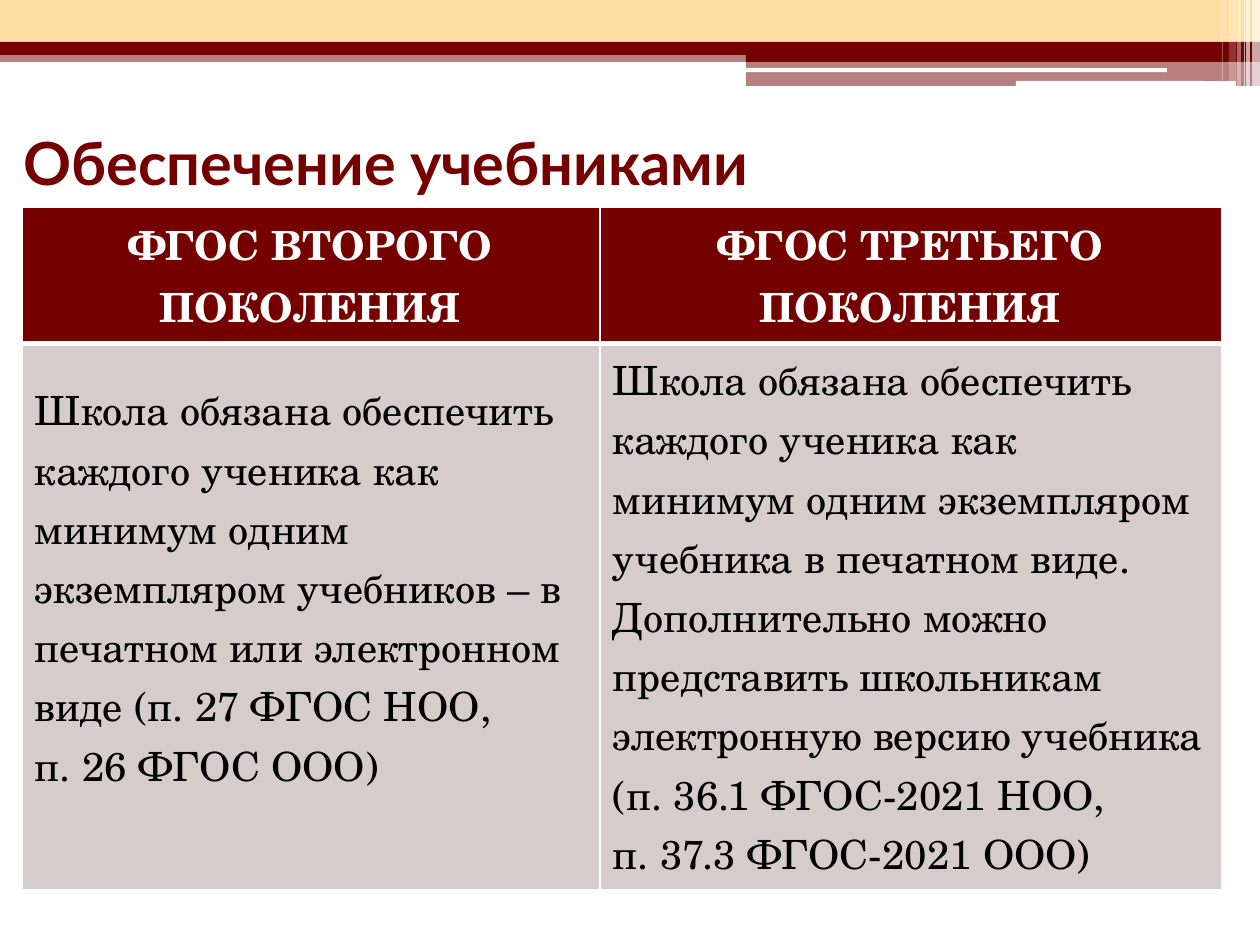
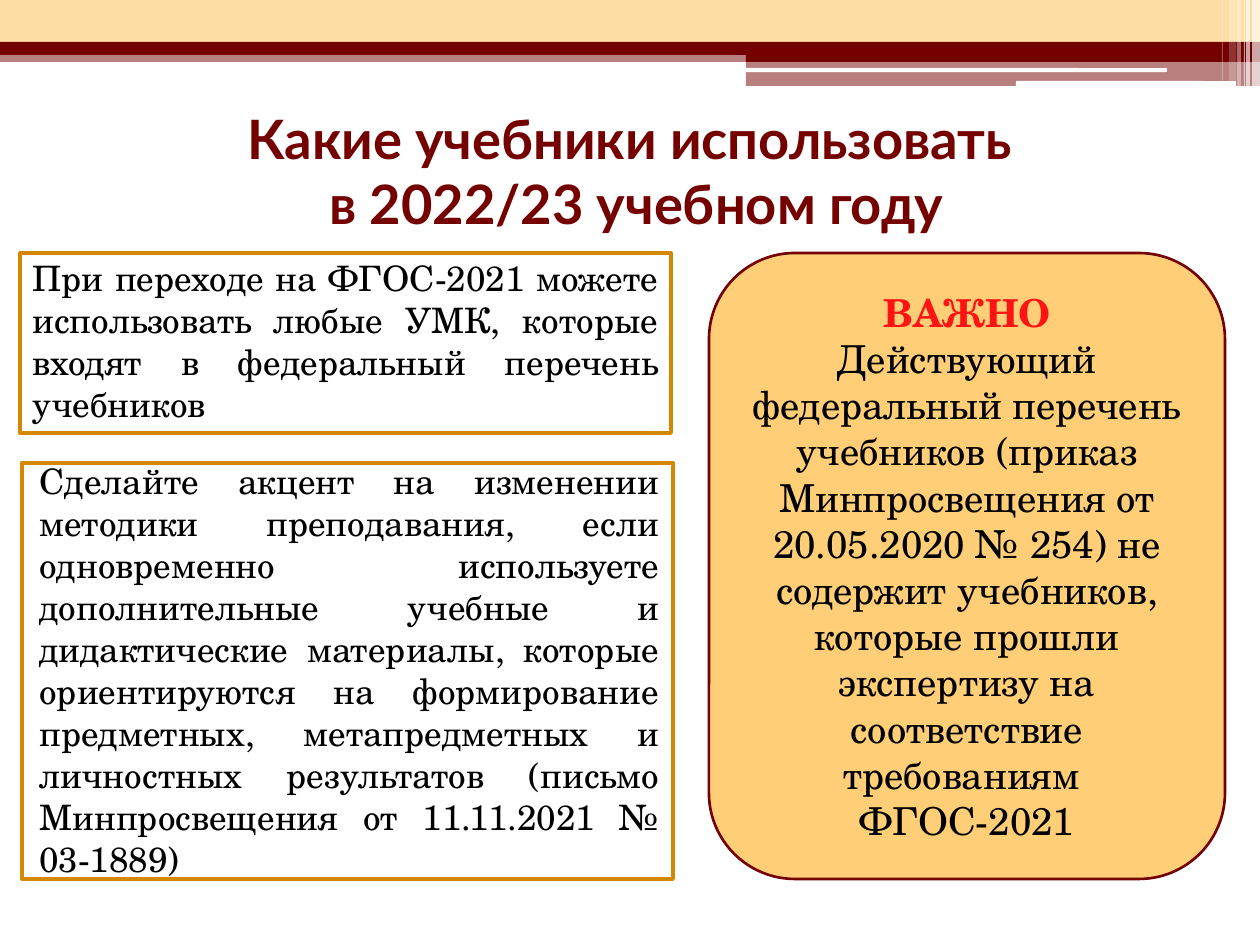
from lxml.etree import Element, SubElement
from pptx import Presentation
from pptx.dml.color import RGBColor
from pptx.enum.shapes import MSO_SHAPE
from pptx.enum.text import MSO_ANCHOR, MSO_AUTO_SIZE, PP_ALIGN
from pptx.oxml.ns import qn
from pptx.util import Emu, Pt

COLORS = {
    "maroon": "740000", "cream": "FFDEA4", "white": "FFFFFF", "black": "000000",
    "cell": "D6CCCC", "ochre": "D48800", "amber": "FFCE77", "alert": "FF1313",
}
TITLE_FONT, BODY_FONT = "Lato", "TeX Gyre Schola"
PX_PER_INCH = 126
SLIDE_SIZE = (1260, 945)

# left, top, width, height, colour, opacity in percent
BANDS = [
    (0, 50, 1260, 12, "maroon", 50),
    (0, 0, 1260, 42, "cream", 100),
    (0, 42, 1260, 13, "maroon", 100),
    (746, 49, 514, 13, "maroon", 100),
    (746, 61, 514, 25, "maroon", 50),
]
ROUNDED_BANDS = [
    (745, 68, 422, 4, "white", 100),
    (1016, 81, 220, 5, "white", 100),
]
# left, width, height, opacity in percent
EDGE_STRIPES = [
    (1252, 8, 86, 65), (1246, 4, 86, 65), (1244, 1, 86, 60),
    (1237, 4, 86, 40), (1229, 7, 81, 20), (1222, 1, 81, 30),
]

SUPPLY_TITLE = "Обеспечение учебниками"
SUPPLY_COLUMNS = [
    {"width": 578, "header": "ФГОС ВТОРОГО ПОКОЛЕНИЯ", "bottom": 64, "body": [
        "Школа обязана обеспечить каждого ученика как минимум одним экземпляром "
        "учебников – в печатном или электронном виде (п. 27 ФГОС НОО,",
        "п. 26 ФГОС ООО)"]},
    {"width": 622, "header": "ФГОС ТРЕТЬЕГО ПОКОЛЕНИЯ", "bottom": 6, "body": [
        "Школа обязана обеспечить каждого ученика как минимум одним экземпляром "
        "учебника в печатном виде. Дополнительно можно представить школьникам "
        "электронную версию учебника (п. 36.1 ФГОС-2021 НОО,",
        "п. 37.3 ФГОС-2021 ООО)"]},
]
SUPPLY_ROWS = (136, 546)

CHOICE_TITLE = "Какие учебники использовать \vв 2022/23 учебном году"
# frame, text area, text
ADVICE = [
    ((20, 253, 651, 180), (20, 249, 651, 183),
     "При переходе на ФГОС-2021 можете использовать любые УМК, которые входят "
     "в федеральный перечень учебников"),
    ((22, 463, 651, 416), (27, 451, 645, 437),
     "Сделайте акцент на изменении методики преподавания, если одновременно "
     "используете дополнительные учебные и дидактические материалы, которые "
     "ориентируются на формирование предметных, метапредметных и личностных "
     "результатов (письмо Минпросвещения от 11.11.2021 № 03-1889)"),
]
WARNING = [
    "ВАЖНО",
    "Действующий федеральный перечень учебников (приказ Минпросвещения от "
    "20.05.2020 № 254) не содержит учебников, которые прошли экспертизу на "
    "соответствие требованиям ",
    "ФГОС-2021",
]


def px(length):
    return Emu(round(length * 914400 / PX_PER_INCH))


def place(area):
    return [px(length) for length in area]


def color(name):
    return RGBColor.from_string(COLORS[name])


def write(frame, texts, size, ink="black", font=BODY_FONT, bold=False, align=PP_ALIGN.LEFT):
    """Fill a text frame with one evenly formatted paragraph per text."""
    for index, text in enumerate(texts):
        para = frame.add_paragraph() if index else frame.paragraphs[0]
        para.text = text
        para.alignment = align
        para.font.name, para.font.size, para.font.bold = font, Pt(size), bold
        para.font.color.rgb = color(ink)


def add_box(page, area, fill=None, line=None, width=0, opacity=100, kind=MSO_SHAPE.RECTANGLE):
    box = page.shapes.add_shape(kind, *place(area))
    box.shadow.inherit = False
    if fill:
        box.fill.solid()
        box.fill.fore_color.rgb = color(fill)
        if opacity < 100:
            tint = box.element.spPr.find(qn("a:solidFill"))[0]
            SubElement(tint, qn("a:alpha"), val=str(opacity * 1000))
    else:
        box.fill.background()
    if line:
        box.line.color.rgb = color(line)
        box.line.width = Pt(width)
    else:
        box.line.fill.background()
    return box


def decorate_layout(layout, page):
    """Draw the bands on a page, then move them to the layout that all pages share."""
    stripes = [(left, 0, width, height, "white", opacity)
               for left, width, height, opacity in EDGE_STRIPES]
    for kind, bands in ((MSO_SHAPE.RECTANGLE, BANDS),
                        (MSO_SHAPE.ROUNDED_RECTANGLE, ROUNDED_BANDS),
                        (MSO_SHAPE.RECTANGLE, stripes)):
        for *area, fill, opacity in bands:
            band = add_box(page, area, fill, opacity=opacity, kind=kind)
            layout.shapes.element.append(band.element)


def set_title(page, text, area, size, align):
    title = page.shapes.title
    title.left, title.top, title.width, title.height = place(area)
    frame = title.text_frame
    frame.word_wrap = True
    frame.auto_size = MSO_AUTO_SIZE.NONE
    frame.vertical_anchor = MSO_ANCHOR.MIDDLE
    write(frame, [text], size, "maroon", TITLE_FONT, True, align)


def fill_cell(cell, texts, fill, divider, bottom=6, **style):
    """Write and colour a cell; divider names its thick white side (lnT or lnB)."""
    cell.fill.solid()
    cell.fill.fore_color.rgb = color(fill)
    cell.vertical_anchor = MSO_ANCHOR.MIDDLE
    cell.margin_left, cell.margin_right = px(13), px(14)
    cell.margin_top, cell.margin_bottom = px(6), px(bottom)
    border = Element(qn("a:" + divider), w=str(Pt(3)))
    SubElement(SubElement(border, qn("a:solidFill")), qn("a:srgbClr"), val=COLORS["white"])
    cell.fill._xPr.insert(0, border)
    write(cell.text_frame, texts, 23, **style)


def build_supply(page):
    set_title(page, SUPPLY_TITLE, (11, 88, 1222, 147), 34, PP_ALIGN.LEFT)
    total = sum(column["width"] for column in SUPPLY_COLUMNS)
    area = (22, 207, total, sum(SUPPLY_ROWS))
    table = page.shapes.add_table(2, len(SUPPLY_COLUMNS), *place(area)).table
    table.horz_banding = False
    for row, height in zip(table.rows, SUPPLY_ROWS):
        row.height = px(height)
    for index, column in enumerate(SUPPLY_COLUMNS):
        table.columns[index].width = px(column["width"])
        fill_cell(table.cell(0, index), [column["header"]], "maroon", "lnB",
                  ink="white", bold=True, align=PP_ALIGN.CENTER)
        fill_cell(table.cell(1, index), column["body"], "cell", "lnT", column["bottom"])


def build_choice(page):
    set_title(page, CHOICE_TITLE, (13, 97, 1246, 147), 31, PP_ALIGN.CENTER)
    for outline, area, text in ADVICE:
        add_box(page, outline, line="ochre", width=2.25)
        frame = page.shapes.add_textbox(*place(area)).text_frame
        frame.word_wrap = True
        frame.vertical_anchor = MSO_ANCHOR.MIDDLE
        write(frame, [text], 20, align=PP_ALIGN.JUSTIFY)
    warning = add_box(page, (709, 253, 516, 626), "amber", "maroon", 1.5,
                      kind=MSO_SHAPE.ROUNDED_RECTANGLE)
    frame = warning.text_frame
    frame.word_wrap = True
    frame.vertical_anchor = MSO_ANCHOR.MIDDLE
    write(frame, WARNING, 22, align=PP_ALIGN.CENTER)
    heading = frame.paragraphs[0].font
    heading.bold = True
    heading.color.rgb = color("alert")


def main():
    deck = Presentation()
    deck.slide_width, deck.slide_height = place(SLIDE_SIZE)
    layout = deck.slide_layouts[5]
    supply, choice = [deck.slides.add_slide(layout) for _ in range(2)]
    decorate_layout(layout, supply)
    build_supply(supply)
    build_choice(choice)
    deck.save("out.pptx")


if __name__ == "__main__":
    main()
